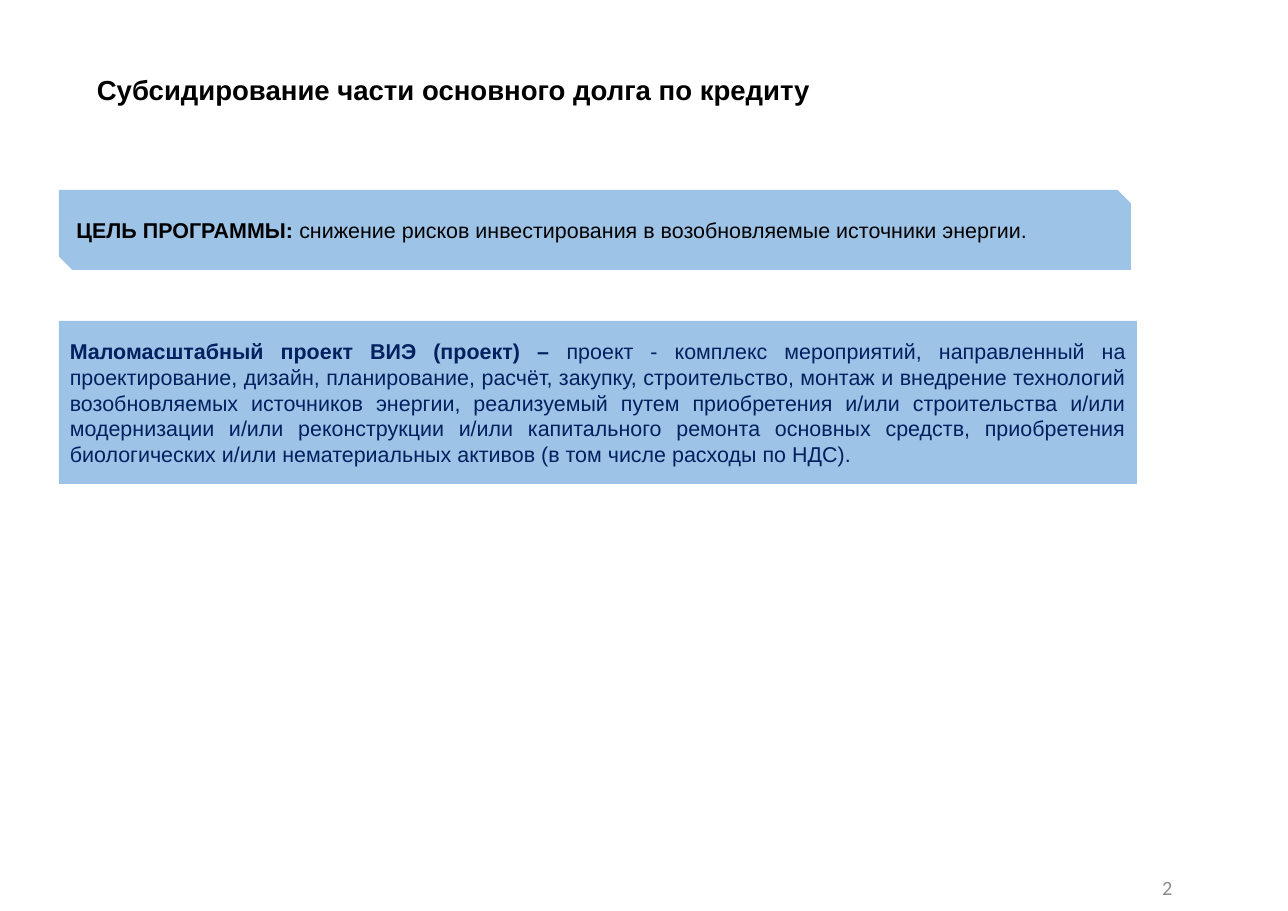
from dataclasses import dataclass

from pptx import Presentation
from pptx.dml.color import RGBColor
from pptx.enum.shapes import MSO_SHAPE
from pptx.enum.text import MSO_ANCHOR, PP_ALIGN
from pptx.util import Pt

EMU_PER_PX = 8298


def px(n):
    return n * EMU_PER_PX


@dataclass(frozen=True)
class Theme:
    font: str = "Arial"
    number_font: str = "Calibri"
    black: str = "000000"
    navy: str = "002060"
    grey: str = "8C8C8C"
    panel: str = "9DC3E6"
    title_size: float = 18
    body_size: float = 14
    number_size: float = 13.2


class SlideBuilder:
    def __init__(self, slide, theme):
        self.slide = slide
        self.theme = theme

    def style(self, p, name, size, color, bold=None):
        p.font.name = name
        p.font.size = Pt(size)
        p.font.color.rgb = RGBColor.from_string(color)
        p.font.bold = bold

    def frame(self, sp, align):
        tf = sp.text_frame
        tf.word_wrap = True
        tf.vertical_anchor = MSO_ANCHOR.MIDDLE
        p = tf.paragraphs[0]
        p.alignment = align
        return tf, p

    def textbox(self, box, align):
        sp = self.slide.shapes.add_textbox(*map(px, box))
        return self.frame(sp, align)

    def title(self, box, text):
        t = self.theme
        tf, p = self.textbox(box, PP_ALIGN.CENTER)
        tf.margin_left = tf.margin_right = tf.margin_top = tf.margin_bottom = 0
        p.text = text
        self.style(p, t.font, t.title_size, t.black, True)

    def page_number(self, box, text):
        t = self.theme
        tf, p = self.textbox(box, PP_ALIGN.RIGHT)
        p.text = text
        self.style(p, t.number_font, t.number_size, t.grey)

    def panel(self, kind, box, lead, text, color):
        t = self.theme
        sp = self.slide.shapes.add_shape(kind, *map(px, box))
        sp.shadow.inherit = False
        sp.fill.solid()
        sp.fill.fore_color.rgb = RGBColor.from_string(t.panel)
        sp.line.fill.background()
        tf, p = self.frame(sp, PP_ALIGN.JUSTIFY)
        self.style(p, t.font, t.body_size, color)
        for part, bold in ((lead, True), (text, False)):
            r = p.add_run()
            r.text = part
            self.style(r, t.font, t.body_size, color, bold)


def main():
    prs = Presentation()
    prs.slide_width, prs.slide_height = px(1288), px(911)
    theme = Theme()
    s = SlideBuilder(prs.slides.add_slide(prs.slide_layouts[6]), theme)

    # Heading
    s.title((59, 52, 789, 75), "Субсидирование части основного долга по кредиту")

    # Programme goal
    s.panel(
        MSO_SHAPE.SNIP_2_DIAG_RECTANGLE, (59, 190, 1072, 80),
        "ЦЕЛЬ ПРОГРАММЫ: ",
        "снижение рисков инвестирования в возобновляемые источники энергии.",
        theme.black,
    )

    # Project definition
    s.panel(
        MSO_SHAPE.RECTANGLE, (59, 321, 1078, 163),
        "Маломасштабный проект ВИЭ (проект) – ",
        "проект - комплекс мероприятий, направленный на проектирование, дизайн, "
        "планирование, расчёт, закупку, строительство, монтаж и внедрение "
        "технологий возобновляемых источников энергии, реализуемый путем "
        "приобретения и/или строительства и/или модернизации и/или "
        "реконструкции и/или капитального ремонта основных средств, "
        "приобретения биологических и/или нематериальных активов "
        "(в том числе расходы по НДС).",
        theme.navy,
    )

    # Page number
    s.page_number((893, 863, 290, 48), "2")

    prs.save("out.pptx")


if __name__ == "__main__":
    main()
